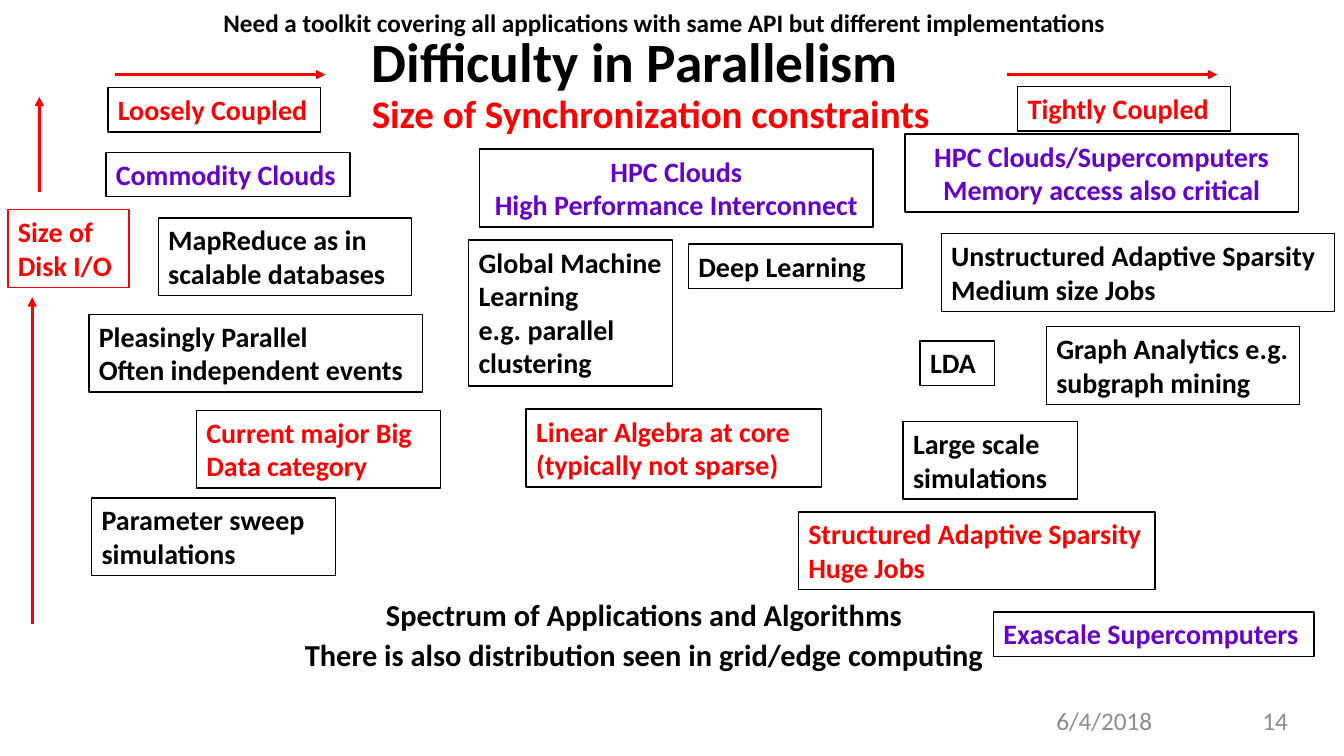
from dataclasses import dataclass

from lxml.etree import SubElement
from pptx import Presentation
from pptx.dml.color import RGBColor
from pptx.enum.shapes import MSO_CONNECTOR, MSO_SHAPE
from pptx.enum.text import MSO_ANCHOR, MSO_AUTO_SIZE, PP_ALIGN
from pptx.oxml.ns import qn
from pptx.shapes.autoshape import Shape
from pptx.slide import Slide
from pptx.text.text import TextFrame, _Paragraph
from pptx.util import Cm, Pt


@dataclass(frozen=True)
class Theme:
    font: str = "Calibri"
    black: RGBColor = RGBColor(0x00, 0x00, 0x00)
    red: RGBColor = RGBColor(0xFF, 0x00, 0x00)
    purple: RGBColor = RGBColor(0x66, 0x00, 0xCC)
    grey: RGBColor = RGBColor(0x8C, 0x8C, 0x8C)
    title: float = 39.6
    subtitle: float = 27.9
    body: float = 21.7
    label: float = 20
    small: float = 18
    border: float = 1
    arrow: float = 2.25


THEME = Theme()
BOX_HEIGHTS = {1: 1.12, 2: 1.96, 4: 3.68}  # cm, by number of text lines


@dataclass(frozen=True)
class Box:
    """A bordered label; lengths in cm, height given as a number of text lines."""
    left: float
    top: float
    width: float
    lines: int
    paragraphs: tuple[str, ...]
    color: RGBColor = THEME.black
    border: RGBColor = THEME.black
    align: PP_ALIGN = PP_ALIGN.LEFT


@dataclass(frozen=True)
class Caption:
    """Unbordered text; lengths in cm."""
    left: float
    top: float
    width: float
    height: float
    paragraphs: tuple[str, ...]
    size: float
    color: RGBColor = THEME.black
    bold: bool = True
    align: PP_ALIGN = PP_ALIGN.LEFT
    line_spacing: float = 1.0
    space_before: float = 0


@dataclass(frozen=True)
class Arrow:
    x1: float
    y1: float
    x2: float
    y2: float


BOXES = (
    Box(2.24, 7.92, 8.41, 2, ("Pleasingly Parallel", "Often independent events")),
    Box(3.99, 5.49, 6.38, 2, ("MapReduce as in scalable databases",)),
    Box(20.12, 12.9, 8.99, 2, ("Structured Adaptive Sparsity", "Huge Jobs"), THEME.red),
    Box(2.72, 2.21, 5.36, 1, ("Loosely Coupled",), THEME.red),
    Box(22.76, 10.62, 4.39, 2, ("Large scale simulations",)),
    Box(4.95, 10.34, 6.15, 2, ("Current major Big Data category",), THEME.red),
    Box(2.67, 3.84, 6.15, 1, ("Commodity Clouds",), THEME.purple),
    Box(12.09, 3.76, 9.91, 2, ("HPC Clouds", "High Performance Interconnect"),
        THEME.purple, align=PP_ALIGN.CENTER),
    Box(25.04, 15.42, 8.08, 1, ("Exascale Supercomputers",), THEME.purple),
    Box(11.81, 6.05, 5.14, 4, ("Global Machine Learning", "e.g. parallel clustering")),
    Box(17.35, 6.15, 5.38, 1, ("Deep Learning",)),
    Box(22.81, 3.38, 9.91, 2, ("HPC Clouds/Supercomputers", "Memory access also critical"),
        THEME.purple, align=PP_ALIGN.CENTER),
    Box(23.72, 5.89, 9.91, 2, ("Unstructured Adaptive Sparsity", "Medium size Jobs")),
    Box(26.37, 8.23, 6.38, 2, ("Graph Analytics e.g. subgraph mining",)),
    Box(23.19, 8.59, 1.88, 1, ("LDA",)),
    Box(13.26, 10.31, 7.44, 2, ("Linear Algebra at core (typically not sparse)",), THEME.red),
    Box(0.2, 5.28, 3.05, 2, ("Size of Disk I/O",), THEME.red, THEME.red),
    Box(25.65, 2.18, 5.36, 1, ("Tightly Coupled",), THEME.red),
    Box(2.31, 12.55, 6.15, 2, ("Parameter sweep simulations",)),
)

CAPTIONS = (
    Caption(5.38, 0.05, 23.29, 1.02,
            ("Need a toolkit covering all applications with same API "
             "but different implementations",), THEME.small),
    Caption(7.09, 15.16, 18.29, 2.74,
            ("Spectrum of Applications and Algorithms",
             "There is also distribution seen in grid/edge computing"),
            THEME.body, align=PP_ALIGN.CENTER, line_spacing=0.7, space_before=10),
    Caption(26.37, 17.65, 3.66, 1.02, ("6/4/2018",), THEME.small, THEME.grey, False),
    Caption(29.69, 17.65, 3.02, 1.02, ("14",), THEME.small, THEME.grey, False,
            PP_ALIGN.RIGHT),
)

ARROWS = (
    Arrow(2.9, 1.88, 8.2, 1.88),
    Arrow(25.37, 1.88, 30.68, 1.88),
    Arrow(0.81, 15.72, 0.81, 7.49),
    Arrow(0.99, 4.85, 0.99, 2.44),
)


def add_run(p: _Paragraph, text: str, size: float, color: RGBColor, bold: bool = True) -> None:
    r = p.add_run()
    r.text = text
    r.font.name = THEME.font
    r.font.size = Pt(size)
    r.font.bold = bold
    r.font.color.rgb = color


def add_paragraph(tf: TextFrame, index: int, align: PP_ALIGN) -> _Paragraph:
    """Return the frame's own first paragraph for index 0, else a new one."""
    p = tf.add_paragraph() if index else tf.paragraphs[0]
    p.alignment = align
    return p


def add_text_box(s: Slide, left: float, top: float, width: float, height: float) -> Shape:
    sp = s.shapes.add_textbox(Cm(left), Cm(top), Cm(width), Cm(height))
    sp.text_frame.word_wrap = True
    return sp


def add_title(s: Slide) -> None:
    tf = add_text_box(s, 9.12, 1.14, 15.47, 2.06).text_frame
    tf.vertical_anchor = MSO_ANCHOR.MIDDLE
    p = add_paragraph(tf, 0, PP_ALIGN.LEFT)
    p.line_spacing = 0.9
    add_run(p, "Difficulty in Parallelism", THEME.title, THEME.black)
    p.add_line_break()
    add_run(p, "Size of Synchronization constraints", THEME.subtitle, THEME.red)


def add_caption(s: Slide, caption: Caption) -> None:
    tf = add_text_box(s, caption.left, caption.top, caption.width, caption.height).text_frame
    for i, text in enumerate(caption.paragraphs):
        p = add_paragraph(tf, i, caption.align)
        p.line_spacing = caption.line_spacing
        if i:
            p.space_before = Pt(caption.space_before)
        add_run(p, text, caption.size, caption.color, caption.bold)


def add_box(s: Slide, box: Box) -> None:
    sp = s.shapes.add_shape(MSO_SHAPE.RECTANGLE, Cm(box.left), Cm(box.top),
                            Cm(box.width), Cm(BOX_HEIGHTS[box.lines]))
    sp.shadow.inherit = False
    sp.fill.background()
    sp.line.color.rgb = box.border
    sp.line.width = Pt(THEME.border)
    tf = sp.text_frame
    tf.word_wrap = True
    tf.auto_size = MSO_AUTO_SIZE.SHAPE_TO_FIT_TEXT
    tf.vertical_anchor = MSO_ANCHOR.TOP
    for i, text in enumerate(box.paragraphs):
        add_run(add_paragraph(tf, i, box.align), text, THEME.label, box.color)


def add_arrow(s: Slide, arrow: Arrow) -> None:
    line = s.shapes.add_connector(MSO_CONNECTOR.STRAIGHT, Cm(arrow.x1), Cm(arrow.y1),
                                  Cm(arrow.x2), Cm(arrow.y2))
    line.line.color.rgb = THEME.red
    line.line.width = Pt(THEME.arrow)
    SubElement(line.line._get_or_add_ln(), qn("a:tailEnd"), type="triangle")
    SubElement(line._element.spPr, qn("a:effectLst"))


def main() -> None:
    prs = Presentation()
    prs.slide_width, prs.slide_height = Cm(33.87), Cm(19.05)
    s = prs.slides.add_slide(prs.slide_layouts[6])
    add_title(s)
    for caption in CAPTIONS:
        add_caption(s, caption)
    for arrow in ARROWS:
        add_arrow(s, arrow)
    for box in BOXES:
        add_box(s, box)
    prs.save("out.pptx")


if __name__ == "__main__":
    main()
